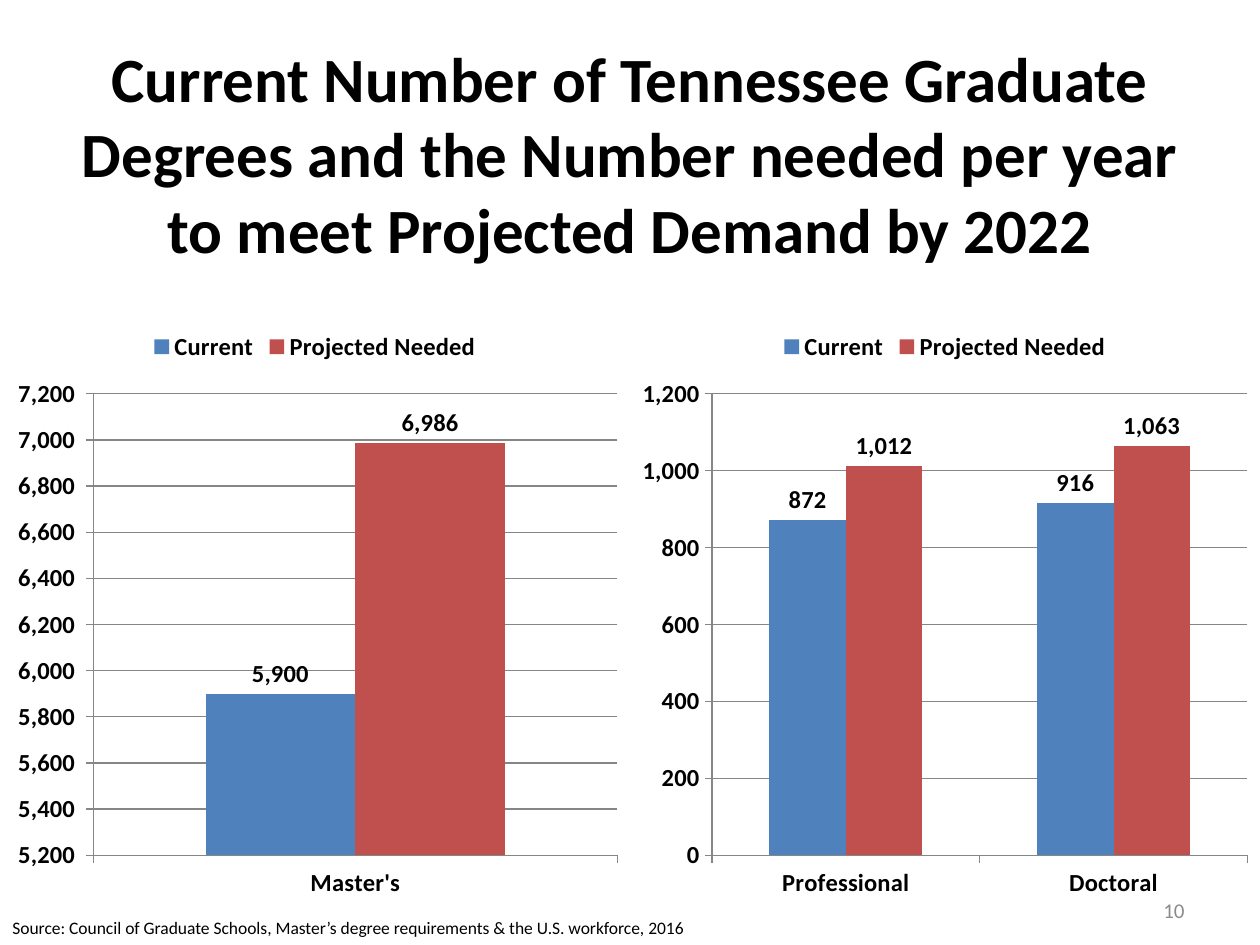
"""Build a slide comparing current and needed Tennessee graduate degrees."""
from pptx import Presentation
from pptx.chart.data import CategoryChartData
from pptx.dml.color import RGBColor
from pptx.enum import chart as charts, text
from pptx.util import Inches, Pt

BLACK = RGBColor(0x00, 0x00, 0x00)
GRAY = RGBColor(0x8C, 0x8C, 0x8C)
GRID = RGBColor(0x86, 0x86, 0x86)
BLUE = RGBColor(0x4F, 0x81, 0xBD)
RED = RGBColor(0xC0, 0x50, 0x4D)
FONT = "Calibri"
THOUSANDS = "#,##0"
ACCOUNTING = '_(* #,##0_);_(* \\(#,##0\\);_(* "-"??_);_(@_)'


def style_font(font, size, color=BLACK, bold=False):
    font.name = FONT
    font.size = Pt(size)
    font.bold = bold
    font.color.rgb = color


def write_text(shape, words, size, align, color=BLACK, bold=False):
    para = shape.text_frame.paragraphs[0]
    para.alignment = align
    span = para.add_run()
    span.text = words
    style_font(span.font, size, color, bold)


deck = Presentation()
deck.slide_width = Inches(10)
deck.slide_height = Inches(7.5)
page = deck.slides.add_slide(deck.slide_layouts[5])

title = page.shapes.title
title.left, title.top = Inches(0.5), Inches(0.3)
title.width, title.height = Inches(9), Inches(1.82)
title.text_frame.word_wrap = True
title.text_frame.auto_size = text.MSO_AUTO_SIZE.NONE
title.text_frame.vertical_anchor = text.MSO_ANCHOR.MIDDLE
write_text(
    title,
    "Current Number of Tennessee Graduate Degrees and the Number needed "
    "per year to meet Projected Demand by 2022",
    36, text.PP_ALIGN.CENTER, bold=True,
)

source = page.shapes.add_textbox(Inches(0), Inches(7.23), Inches(5.66), Inches(0.27))
source.text_frame.word_wrap = False
source.text_frame.auto_size = text.MSO_AUTO_SIZE.SHAPE_TO_FIT_TEXT
write_text(
    source,
    "Source: Council of Graduate Schools, Master’s degree requirements "
    "& the U.S. workforce, 2016",
    10, text.PP_ALIGN.LEFT,
)

panels = [
    (["Master's"], [5900], [6986], (5200, 7200, 200), ACCOUNTING),
    (["Professional", "Doctoral"], [872, 916], [1012, 1063], (0, 1200, 200), THOUSANDS),
]
for index, (degrees, current, needed, scale, axis_format) in enumerate(panels):
    data = CategoryChartData()
    data.categories = degrees
    data.add_series("Current", current)
    data.add_series("Projected Needed", needed)
    chart = page.shapes.add_chart(
        charts.XL_CHART_TYPE.COLUMN_CLUSTERED,
        Inches(5 * index), Inches(2.52), Inches(5), Inches(4.7), data,
    ).chart
    style_font(chart.font, 10)
    chart.has_title = False
    chart.has_legend = True
    chart.legend.position = charts.XL_LEGEND_POSITION.TOP
    chart.legend.include_in_layout = False
    style_font(chart.legend.font, 14, bold=True)

    value_axis = chart.value_axis
    value_axis.minimum_scale, value_axis.maximum_scale, value_axis.major_unit = scale
    value_axis.tick_labels.number_format = axis_format
    value_axis.tick_labels.number_format_is_linked = False
    value_axis.has_major_gridlines = True
    value_axis.major_gridlines.format.line.color.rgb = GRID
    value_axis.major_gridlines.format.line.width = Pt(0.75)
    for axis in (value_axis, chart.category_axis):
        axis.major_tick_mark = charts.XL_TICK_MARK.OUTSIDE
        axis.format.line.color.rgb = GRID
        axis.format.line.width = Pt(0.75)
        style_font(axis.tick_labels.font, 14, bold=True)

    plot = chart.plots[0]
    plot.gap_width = 150
    plot.overlap = 0
    plot.vary_by_categories = False
    for series, color in zip(plot.series, (BLUE, RED)):
        series.format.fill.solid()
        series.format.fill.fore_color.rgb = color
        labels = series.data_labels
        labels.show_value = True
        labels.number_format = THOUSANDS
        labels.number_format_is_linked = False
        labels.position = charts.XL_LABEL_POSITION.OUTSIDE_END
        style_font(labels.font, 14, bold=True)

number = page.shapes.add_textbox(Inches(7.17), Inches(7.02), Inches(2.33), Inches(0.4))
number.text_frame.word_wrap = True
number.text_frame.vertical_anchor = text.MSO_ANCHOR.MIDDLE
write_text(number, "10", 12, text.PP_ALIGN.RIGHT, GRAY)

deck.save("out.pptx")
